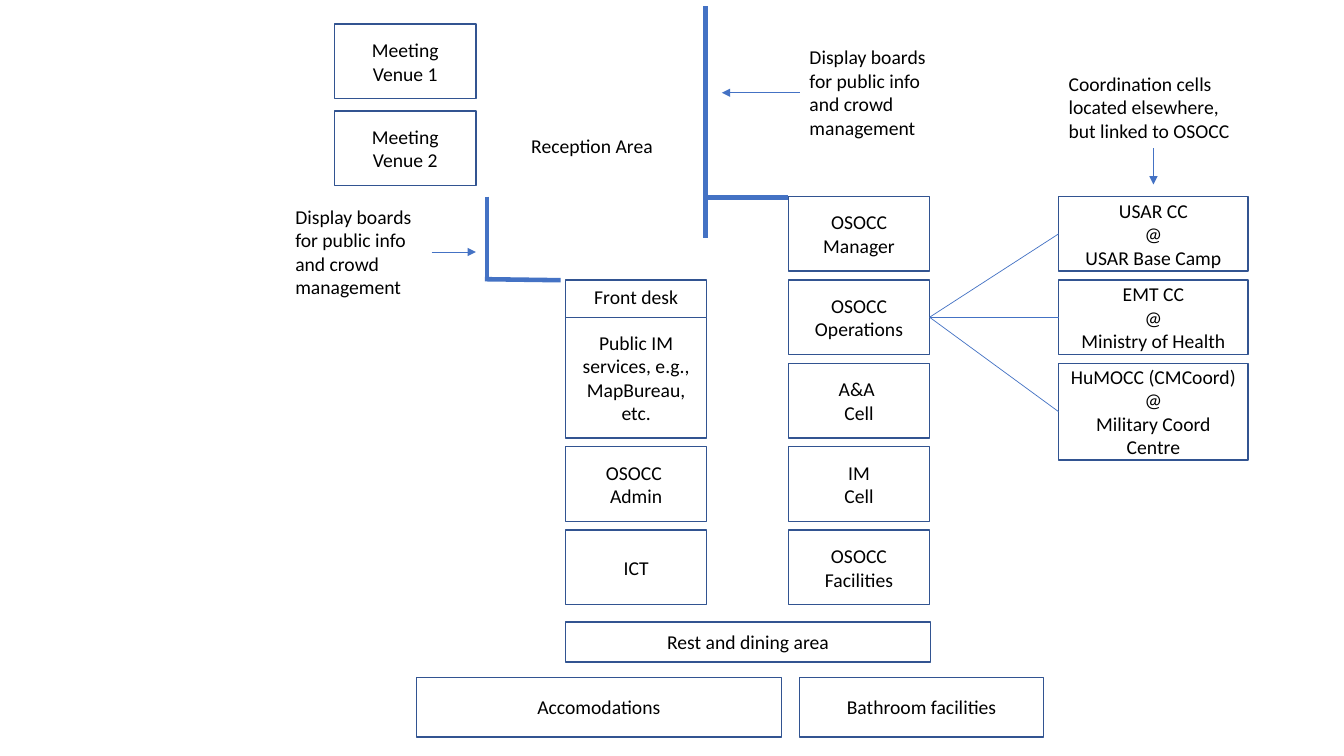
from pptx import Presentation
from pptx.dml.color import RGBColor
from pptx.enum.shapes import MSO_CONNECTOR, MSO_SHAPE
from pptx.enum.text import MSO_ANCHOR, MSO_AUTO_SIZE, PP_ALIGN
from pptx.oxml.ns import qn
from pptx.util import Inches, Pt

RECT = MSO_SHAPE.RECTANGLE
LINE = MSO_CONNECTOR.STRAIGHT
TOP, MID = MSO_ANCHOR.TOP, MSO_ANCHOR.MIDDLE
LEFT, MIDDLE = PP_ALIGN.LEFT, PP_ALIGN.CENTER
GROW = MSO_AUTO_SIZE.SHAPE_TO_FIT_TEXT

COLORS = {"fill": "FFFFFF", "edge": "325491", "wall": "4472C4", "text": "000000"}
FONT, SIZE = "Calibri", 14
THIN, THICK = 0.5, 3.25

VENUES = ["Meeting Venue 1", "Meeting Venue 2"]
STAFF = ["OSOCC Manager", "OSOCC Operations", "A&A \nCell", "IM\nCell",
         "OSOCC\nFacilities"]
DESK = "Front desk"
PUBLIC = "Public IM services, e.g., MapBureau, etc."
SUPPORT = ["OSOCC \nAdmin", "ICT"]
CELLS = [("USAR CC\n@\nUSAR Base Camp", 0.74),
         ("EMT CC\n@\nMinistry of Health", 0.74),
         ("HuMOCC (CMCoord)\n@\nMilitary Coord Centre", 0.96)]
ROOMS = [("Rest and dining area", 5.61, 6.17, 3.62, 0.4),
         ("Accomodations", 4.13, 6.72, 3.62, 0.59),
         ("Bathroom facilities", 7.93, 6.72, 2.42, 0.59)]
BOARDS = "Display boards for public info and crowd management"
RECEPTION = ("Reception Area", 5.17, 1.28, 1.42, 0.34)
NOTES = [((BOARDS, 7.93, 0.4, 1.45, 1.04), 1, (-0.77, 0)),
         ((BOARDS, 2.83, 1.98, 1.45, 1.04), 3, (0.44, 0)),
         (("Coordination cells located elsewhere, but linked to OSOCC",
           10.5, 0.66, 1.88, 0.81), 2, (0, 0.36))]
WALLS = [(7, 0.06, 7, 2.36), (7, 1.96, 7.82, 1.96),
         (4.83, 1.95, 4.83, 2.77), (4.81, 2.77, 5.56, 2.78)]

WIDE, HIGH = 1.4, 0.74
FIRST, LAST = 1.95, 5.26
STEP = (LAST - FIRST) / (len(STAFF) - 1)
VENUE_X, DESK_X, STAFF_X, CELL_X = 3.32, 5.61, 7.82, 10.5
VENUE_Y, VENUE_STEP = 0.24, 0.86

deck = Presentation()
deck.slide_width, deck.slide_height = Inches(13.33), Inches(7.5)
slide = deck.slides.add_slide(deck.slide_layouts[6])


def color(name):
    return RGBColor.from_string(COLORS[name])


def row(i):
    return FIRST + i * STEP


def write(shape, text, align):
    frame = shape.text_frame
    frame.text = text
    for para in frame.paragraphs:
        para.alignment = align
        for run in para.runs:
            run.font.name, run.font.size = FONT, Pt(SIZE)
            run.font.color.rgb = color("text")


def box(text, x, y, w=WIDE, h=HIGH, anchor=MID):
    shape = slide.shapes.add_shape(RECT, *map(Inches, (x, y, w, h)))
    shape.shadow.inherit = False
    shape.fill.solid()
    shape.fill.fore_color.rgb = color("fill")
    shape.line.color.rgb = color("edge")
    shape.line.width = Pt(1)
    shape.text_frame.vertical_anchor = anchor
    write(shape, text, MIDDLE)
    return shape


def note(text, x, y, w, h, wrap=True):
    shape = slide.shapes.add_textbox(*map(Inches, (x, y, w, h)))
    shape.text_frame.word_wrap = wrap
    shape.text_frame.auto_size = GROW
    write(shape, text, LEFT)
    return shape


def line(x1, y1, x2, y2, width, head=False):
    link = slide.shapes.add_connector(LINE, x1, y1, x2, y2)
    link.line.color.rgb = color("wall")
    link.line.width = Pt(width)
    props = link._element.spPr
    if head:
        tail = props.find(qn("a:ln")).makeelement(qn("a:tailEnd"), {"type": "triangle"})
        props.find(qn("a:ln")).append(tail)
    props.append(props.makeelement(qn("a:effectLst"), {}))
    return link


def side(shape, site):
    dx, dy = [(0.5, 0), (0, 0.5), (0.5, 1), (1, 0.5)][site]
    return (int(shape.left + dx * shape.width), int(shape.top + dy * shape.height))


for i, text in enumerate(VENUES):
    box(text, VENUE_X, VENUE_Y + i * VENUE_STEP)
staff = [box(text, STAFF_X, row(i)) for i, text in enumerate(STAFF)]
box(DESK, DESK_X, row(1), h=HIGH / 2, anchor=TOP)
box(PUBLIC, DESK_X, row(1) + HIGH / 2, h=STEP + HIGH / 2)
for i, text in enumerate(SUPPORT, 3):
    box(text, DESK_X, row(i))
for room in ROOMS:
    box(*room)
for wall in WALLS:
    line(*map(Inches, wall), THICK)

ops = staff[1]
for i, (text, h) in enumerate(CELLS):
    cell = box(text, CELL_X, row(i), 1.88, h)
    link = line(*side(ops, 3), *side(cell, 1), THIN)
    link.begin_connect(ops, 3)
    link.end_connect(cell, 1)

note(*RECEPTION, wrap=False)
for label, site, (dx, dy) in NOTES:
    shape = note(*label)
    x, y = side(shape, site)
    arrow = line(x, y, x + Inches(dx), y + Inches(dy), THIN, True)
    arrow.begin_connect(shape, site)

deck.save("out.pptx")
